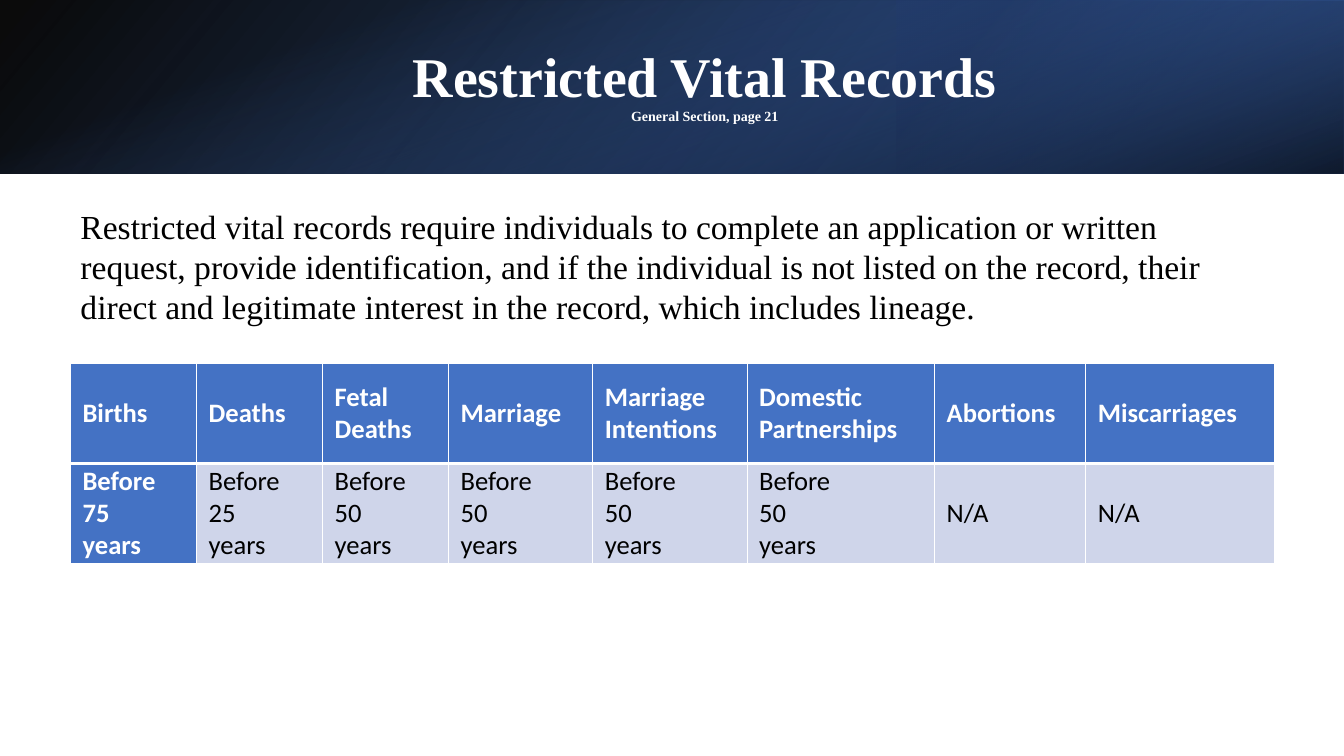
from lxml import etree
from pptx import Presentation
from pptx.dml.color import RGBColor
from pptx.enum.shapes import MSO_SHAPE
from pptx.enum.text import MSO_ANCHOR, PP_ALIGN
from pptx.oxml import parse_xml
from pptx.oxml.ns import nsdecls, qn
from pptx.util import Inches, Pt

COLORS = {
    "white": "FFFFFF", "black": "000000", "blue": "4472C4",
    "mid": "2F5597", "navy": "203864", "pale": "CFD5EA",
}
SERIF, SANS = "Times New Roman", "Calibri"

TITLE = [("Restricted Vital Records", 40), ("General Section, page 21", 10)]
INTRO = ("Restricted vital records require individuals to complete an application "
         "or written request, provide identification, and if the individual is not "
         "listed on the record, their direct and legitimate interest in the record, "
         "which includes lineage.")
# (heading, years before which records are open, column width)
RECORDS = [
    ("Births", 75, 1.25), ("Deaths", 25, 1.25), ("Fetal\nDeaths", 50, 1.25),
    ("Marriage", 50, 1.43), ("Marriage\nIntentions", 50, 1.53),
    ("Domestic\nPartnerships", 50, 1.86), ("Abortions", None, 1.5),
    ("Miscarriages", None, 1.87),
]


def rgb(name):
    return RGBColor.from_string(COLORS[name])


class SlideBuilder:
    def __init__(self, prs):
        self.slide = prs.slides.add_slide(prs.slide_layouts[5])
        self.shapes = self.slide.shapes

    def style(self, font, size, color, face=SERIF, bold=False):
        font.name, font.size, font.bold = face, Pt(size), bold
        font.color.rgb = rgb(color)

    def gradient_band(self, box, stops, angle, rotation=0, flip=False):
        """Add a rectangle with stops given as (position %, colour, opacity %)."""
        sp = self.shapes.add_shape(MSO_SHAPE.RECTANGLE, *map(Inches, box))
        sp.shadow.inherit = False
        sp.line.fill.background()
        sp.rotation = rotation
        if flip:
            sp._element.spPr.find(qn("a:xfrm")).set("flipH", "1")
        gs = "".join(
            f'<a:gs pos="{pos * 1000}"><a:srgbClr val="{COLORS[color]}">'
            f'<a:alpha val="{alpha * 1000}"/></a:srgbClr></a:gs>'
            for pos, color, alpha in stops)
        fill = parse_xml(
            f'<a:gradFill {nsdecls("a")} rotWithShape="1"><a:gsLst>{gs}</a:gsLst>'
            f'<a:lin ang="{angle * 60000}" scaled="0"/></a:gradFill>')
        sp._element.spPr.find(qn("a:prstGeom")).addnext(fill)

    def title(self, box, lines):
        sp = self.shapes.title
        sp.left, sp.top, sp.width, sp.height = map(Inches, box)
        self.shapes._spTree.append(sp._element)  # bring in front of the bands
        sp.text_frame.vertical_anchor = MSO_ANCHOR.MIDDLE
        p = sp.text_frame.paragraphs[0]
        p.alignment, p.line_spacing = PP_ALIGN.CENTER, 0.9
        for i, (text, size) in enumerate(lines):
            if i:
                p.add_line_break()
            r = p.add_run()
            r.text = text
            self.style(r.font, size, "white", bold=True)

    def text(self, box, text, size):
        tf = self.shapes.add_textbox(*map(Inches, box)).text_frame
        tf.word_wrap = True
        tf.text = text
        self.style(tf.paragraphs[0].font, size, "black")

    def borders(self, cell, widths):
        """Draw white edges; widths are points for left, right, top, bottom."""
        tcPr = cell._tc.get_or_add_tcPr()
        for i, (side, width) in enumerate(zip("LRTB", widths)):
            ln = etree.Element(qn(f"a:ln{side}"), w=str(Pt(width)))
            fill = etree.SubElement(ln, qn("a:solidFill"))
            etree.SubElement(fill, qn("a:srgbClr"), val=COLORS["white"])
            tcPr.insert(i, ln)

    def cell(self, cell, text, emphasis, edges):
        cell.margin_left = cell.margin_right = Inches(0.12)
        cell.margin_top = cell.margin_bottom = 0
        cell.vertical_anchor = MSO_ANCHOR.MIDDLE
        cell.fill.solid()
        cell.fill.fore_color.rgb = rgb("blue" if emphasis else "pale")
        cell.text = text
        for p in cell.text_frame.paragraphs:
            p.alignment = PP_ALIGN.JUSTIFY
            self.style(p.font, 19, "white" if emphasis else "black", SANS, emphasis)
        self.borders(cell, edges)

    def records_table(self, box, records):
        table = self.shapes.add_table(2, len(records), *map(Inches, box)).table
        for c, (heading, years, width) in enumerate(records):
            table.columns[c].width = Inches(width)
            limit = f"Before\n{years}\nyears" if years else "N/A"
            self.cell(table.cell(0, c), heading, True, (1, 1, 1, 3))
            self.cell(table.cell(1, c), limit, c == 0, (1, 1, 3, 1))


def main():
    prs = Presentation()
    prs.slide_width, prs.slide_height = Inches(13.33), Inches(7.5)
    s = SlideBuilder(prs)
    s.gradient_band((0, 0, 13.33, 1.72), [(0, "black", 96), (100, "mid", 100)],
                    140, flip=True)
    s.gradient_band((8.89, 0, 4.44, 1.72), [(19, "navy", 68), (100, "blue", 79)],
                    320, rotation=180, flip=True)
    s.gradient_band((5.8, -5.8, 1.72, 13.33), [(23, "blue", 0), (99, "black", 74)],
                    340, rotation=90)
    s.title((1.5, 0.38, 10.98, 0.96), TITLE)
    s.records_table((0.7, 3.61, 11.94, 1.98), RECORDS)
    s.text((0.7, 1.99, 11.86, 1.31), INTRO, 24)
    prs.save("out.pptx")


if __name__ == "__main__":
    main()
